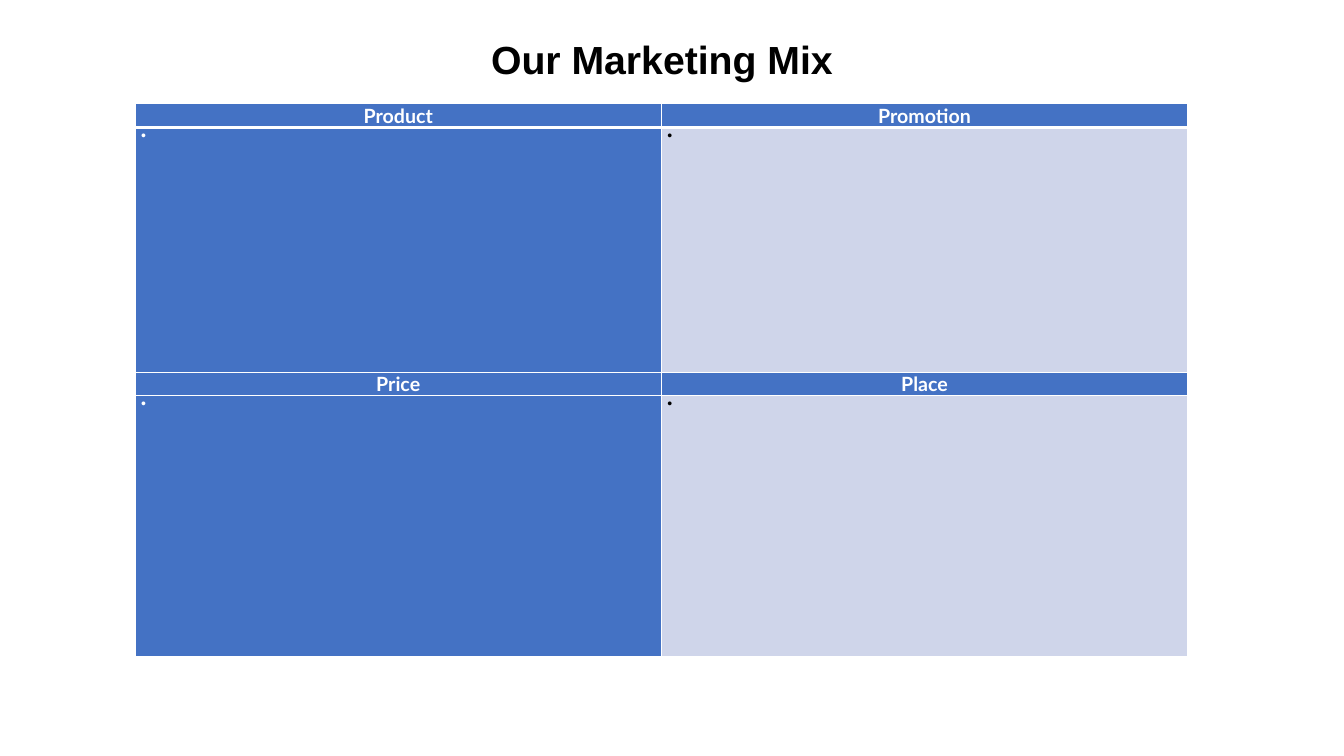
from pptx import Presentation
from pptx import util as u
from pptx.dml.color import RGBColor
from pptx.enum import text
from pptx.oxml import parse_xml
from pptx.oxml.ns import nsdecls

BLACK = RGBColor(0x00, 0x00, 0x00)
WHITE = RGBColor(0xFF, 0xFF, 0xFF)
BLUE = RGBColor(0x44, 0x72, 0xC4)
PALE = RGBColor(0xCF, 0xD5, 0xEA)

HEADINGS = [("Product", "Promotion"), ("Price", "Place")]
ROW_HEIGHTS = [0.23, 2.43, 0.23, 2.59]
TITLE_FONT = {"name": "Arial", "size": u.Pt(28), "bold": True}
HEADING_FONT = {"name": "Lato", "size": u.Pt(14), "bold": True}
BULLET_FONT = {"name": "Arial", "size": u.Pt(10)}
CELL_FORMAT = {
    "margin_left": u.Inches(0.06),
    "margin_right": u.Inches(0.06),
    "margin_top": 0,
    "margin_bottom": 0,
    "vertical_anchor": text.MSO_ANCHOR.TOP,
}


def apply_format(target, values):
    """Set every named attribute on the target."""
    for name, value in values.items():
        setattr(target, name, value)


def add_span(para, wording, font, color):
    """Append formatted wording to a paragraph."""
    span = para.add_run()
    span.text = wording
    apply_format(span.font, font)
    span.font.color.rgb = color


def set_borders(cell, widths):
    """Draw white cell borders of the given widths in points."""
    properties = cell._tc.get_or_add_tcPr()
    for index, (side, width) in enumerate(widths.items()):
        properties.insert(index, parse_xml(
            f'<a:ln{side} {nsdecls("a")} w="{u.Pt(width)}"><a:solidFill>'
            f'<a:srgbClr val="{WHITE}"/></a:solidFill></a:ln{side}>'))


def fill_heading(cell, wording):
    """Write a centred quadrant heading."""
    para = cell.text_frame.paragraphs[0]
    apply_format(para, {"alignment": text.PP_ALIGN.CENTER, "space_before": u.Pt(12)})
    add_span(para, wording, HEADING_FONT, WHITE)


def fill_notes(cell, color):
    """Start an open bullet for the quadrant's notes."""
    para = cell.text_frame.paragraphs[0]
    add_span(para, " ", BULLET_FONT, color)
    properties = para._p.get_or_add_pPr()
    properties.set("marL", str(u.Inches(0.12)))
    properties.set("indent", str(-u.Inches(0.12)))
    properties.append(parse_xml(f'<a:buFont {nsdecls("a")} typeface="Arial"/>'))
    properties.append(parse_xml(f'<a:buChar {nsdecls("a")} char="•"/>'))


def add_title(page, left, top, width, height):
    """Place the slide title in the given box."""
    title = page.shapes.title
    apply_format(title, {"left": left, "top": top, "width": width, "height": height})
    frame = title.text_frame
    apply_format(frame, {"word_wrap": True, "vertical_anchor": text.MSO_ANCHOR.MIDDLE})
    para = frame.paragraphs[0]
    para.alignment = text.PP_ALIGN.CENTER
    add_span(para, "Our Marketing Mix", TITLE_FONT, BLACK)


def add_mix_table(page, left, top, width):
    """Place the four-quadrant marketing table in the given box."""
    height = u.Inches(sum(ROW_HEIGHTS))
    table = page.shapes.add_table(len(ROW_HEIGHTS), 2, left, top, width, height).table
    for row, row_height in enumerate(ROW_HEIGHTS):
        table.rows[row].height = u.Inches(row_height)
        quadrant, is_notes = divmod(row, 2)
        for column in range(2):
            cell = table.cell(row, column)
            apply_format(cell, CELL_FORMAT)
            cell.fill.solid()
            cell.fill.fore_color.rgb = PALE if is_notes and column else BLUE
            set_borders(cell, {"L": 1, "R": 1, "T": 3 if row == 1 else 1,
                               "B": 3 if row == 0 else 1})
            if is_notes:
                fill_notes(cell, BLACK if column else WHITE)
            else:
                fill_heading(cell, HEADINGS[quadrant][column])


def main():
    """Build the marketing mix slide."""
    deck = Presentation()
    deck.slide_width, deck.slide_height = u.Inches(13.33), u.Inches(7.5)
    page = deck.slides.add_slide(deck.slide_layouts[5])
    add_title(page, u.Inches(2.04), u.Inches(0.3), u.Inches(9.05), u.Inches(0.57))
    add_mix_table(page, u.Inches(1.34), u.Inches(1.03), u.Inches(10.44))
    deck.save("out.pptx")


if __name__ == "__main__":
    main()
